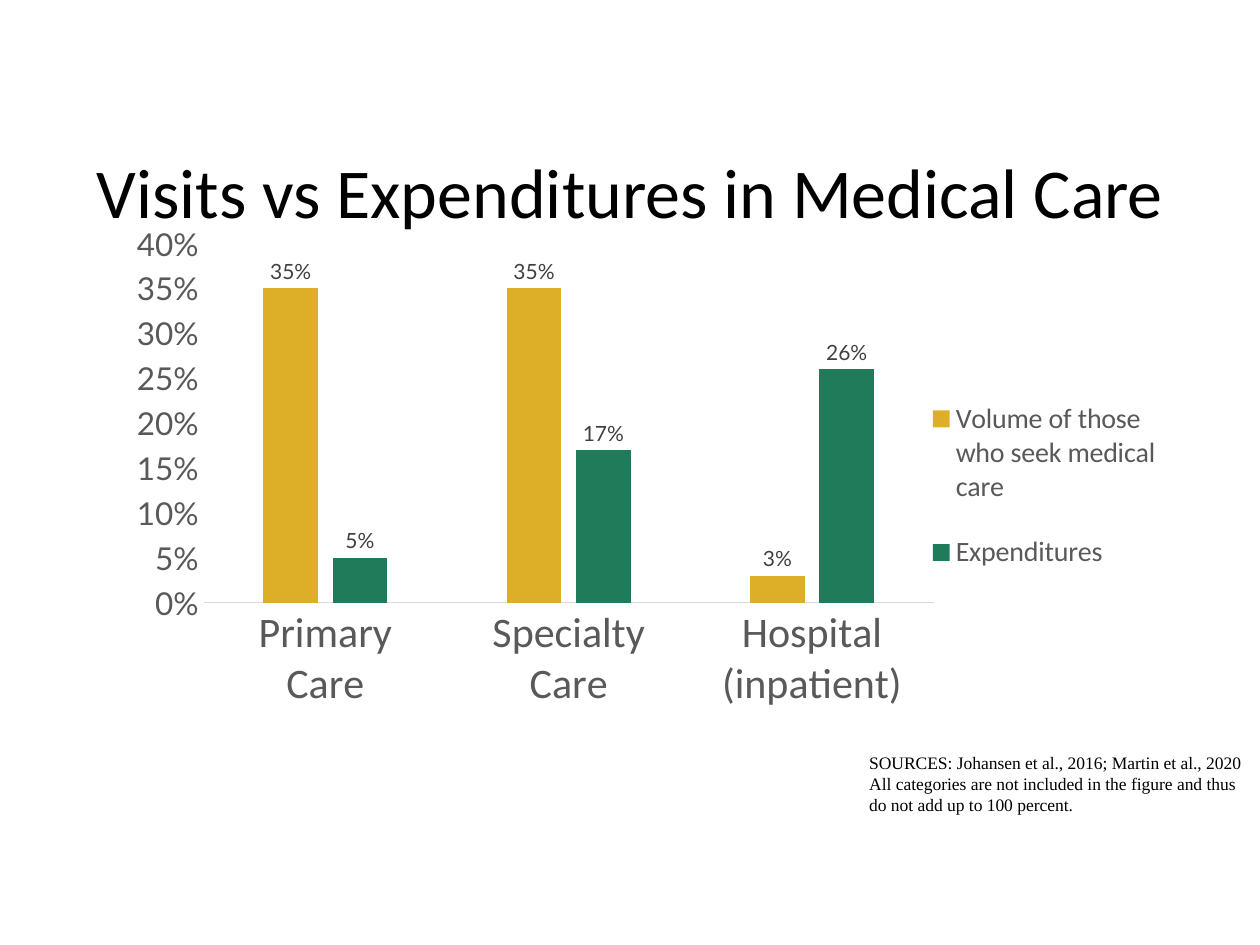
from dataclasses import dataclass

from pptx import Presentation
from pptx.chart.data import CategoryChartData
from pptx.dml.color import RGBColor
from pptx.enum.chart import XL_CHART_TYPE, XL_LABEL_POSITION, XL_LEGEND_POSITION, XL_TICK_MARK
from pptx.enum.text import MSO_ANCHOR, PP_ALIGN
from pptx.oxml import parse_xml
from pptx.oxml.ns import nsdecls
from pptx.util import Inches, Pt


@dataclass(frozen=True)
class Theme:
    """Colours, fonts and type sizes of the slide."""
    ink: str = "000000"
    gray: str = "595959"
    dark: str = "404040"
    rule: str = "D9D9D9"
    gold: str = "DDAE27"
    green: str = "207B5B"
    head: str = "Calibri"
    data: str = "Lato"
    note: str = "Times New Roman"
    title: int = 40
    cats: int = 24
    scale: int = 18
    key: int = 16
    label: int = 12
    small: int = 10


THEME = Theme()


def style(font, name, size, color):
    """Set the face, size and colour of a font."""
    font.name, font.size = name, Pt(size)
    font.color.rgb = RGBColor.from_string(color)


def place(shape, box):
    """Move a shape to a box given in inches."""
    shape.left, shape.top, shape.width, shape.height = map(Inches, box)


def layout(box, inner=False):
    """Return a manual chart layout for a box of fractions."""
    target = '<c:layoutTarget val="inner"/>' if inner else ""
    modes = "".join(f'<c:{key}Mode val="edge"/>' for key in "xy")
    sizes = "".join(f'<c:{key} val="{val}"/>' for key, val in zip("xywh", box))
    return parse_xml(f'<c:layout {nsdecls("c")}><c:manualLayout>{target}{modes}{sizes}'
                     "</c:manualLayout></c:layout>")


def add_title(slide, box, text):
    """Fill and place the title."""
    title = slide.shapes.title
    place(title, box)
    frame = title.text_frame
    frame.text = text
    frame.word_wrap = True
    frame.vertical_anchor = MSO_ANCHOR.MIDDLE
    line = frame.paragraphs[0]
    line.alignment = PP_ALIGN.CENTER
    style(line.font, THEME.head, THEME.title, THEME.ink)


def add_note(slide, box, lines):
    """Add the source note."""
    frame = slide.shapes.add_textbox(*map(Inches, box)).text_frame
    frame.word_wrap = True
    frame.text = "\n".join(lines)
    for line in frame.paragraphs:
        style(line.font, THEME.note, THEME.small, THEME.ink)


def style_axes(chart):
    """Format the category and value axes."""
    cats, scale = chart.category_axis, chart.value_axis
    for axis in (cats, scale):
        axis.major_tick_mark = axis.minor_tick_mark = XL_TICK_MARK.NONE
        axis.has_major_gridlines = False
    style(cats.tick_labels.font, THEME.head, THEME.cats, THEME.gray)
    cats.format.line.color.rgb = RGBColor.from_string(THEME.rule)
    cats.format.line.width = Pt(0.75)
    style(scale.tick_labels.font, THEME.data, THEME.scale, THEME.gray)
    scale.tick_labels.number_format = "0%"
    scale.tick_labels.number_format_is_linked = False
    scale.format.line.fill.background()
    scale.minimum_scale, scale.maximum_scale, scale.major_unit = 0, 0.4, 0.05


def style_bars(chart, colors):
    """Colour and label each series."""
    plot = chart.plots[0]
    plot.gap_width, plot.overlap = 219, -27
    plot.vary_by_categories = False
    for bars, color in zip(plot.series, colors):
        bars.format.fill.solid()
        bars.format.fill.fore_color.rgb = RGBColor.from_string(color)
        labels = bars.data_labels
        labels.show_value = True
        labels.position = XL_LABEL_POSITION.OUTSIDE_END
        labels.number_format, labels.number_format_is_linked = "0%", False
        style(labels.font, THEME.data, THEME.label, THEME.dark)


def set_layout(chart, plot, key):
    """Place the plot area and the legend inside the chart."""
    chart.has_legend = True
    chart.legend.position = XL_LEGEND_POSITION.BOTTOM
    chart.legend.include_in_layout = False
    style(chart.legend.font, THEME.head, THEME.key, THEME.gray)
    root = chart.element
    for old in root.xpath(".//c:plotArea/c:layout | .//c:legend/c:layout"):
        old.getparent().remove(old)
    root.xpath(".//c:plotArea")[0].insert(0, layout(plot, inner=True))
    root.xpath(".//c:legendPos")[0].addnext(layout(key))


def add_bars(slide, box, cats, series):
    """Add the clustered column chart."""
    data = CategoryChartData(number_format="0%")
    data.categories = cats
    for name, vals, _ in series:
        data.add_series(name, vals)
    chart = slide.shapes.add_chart(
        XL_CHART_TYPE.COLUMN_CLUSTERED, *map(Inches, box), data).chart
    chart.has_title = False
    style(chart.font, THEME.data, THEME.small, THEME.ink)
    style_axes(chart)
    style_bars(chart, [color for _, _, color in series])
    set_layout(chart, (0.081, 0.037, 0.694, 0.687), (0.76, 0.28, 0.24, 0.44))


def main():
    """Build and save the slide."""
    deck = Presentation()
    deck.slide_width, deck.slide_height = Inches(10), Inches(7.5)
    slide = deck.slides.add_slide(deck.slide_layouts[5])
    add_note(slide, (6.8, 5.92, 3.19, 0.61), (
        "SOURCES: Johansen et al., 2016; Martin et al., 2020",
        "All categories are not included in the figure and thus do not add up to 100 percent."))
    add_bars(slide, (0.94, 1.78, 8.35, 4.15),
             ("Primary\nCare", "Specialty\nCare", "Hospital\n(inpatient)"),
             (("Volume of those who seek medical care", (0.35, 0.35, 0.03), THEME.gold),
              ("Expenditures", (0.05, 0.17, 0.26), THEME.green)))
    add_title(slide, (0.5, 1.04, 9, 0.94), "Visits vs Expenditures in Medical Care")
    deck.save("out.pptx")


if __name__ == "__main__":
    main()
